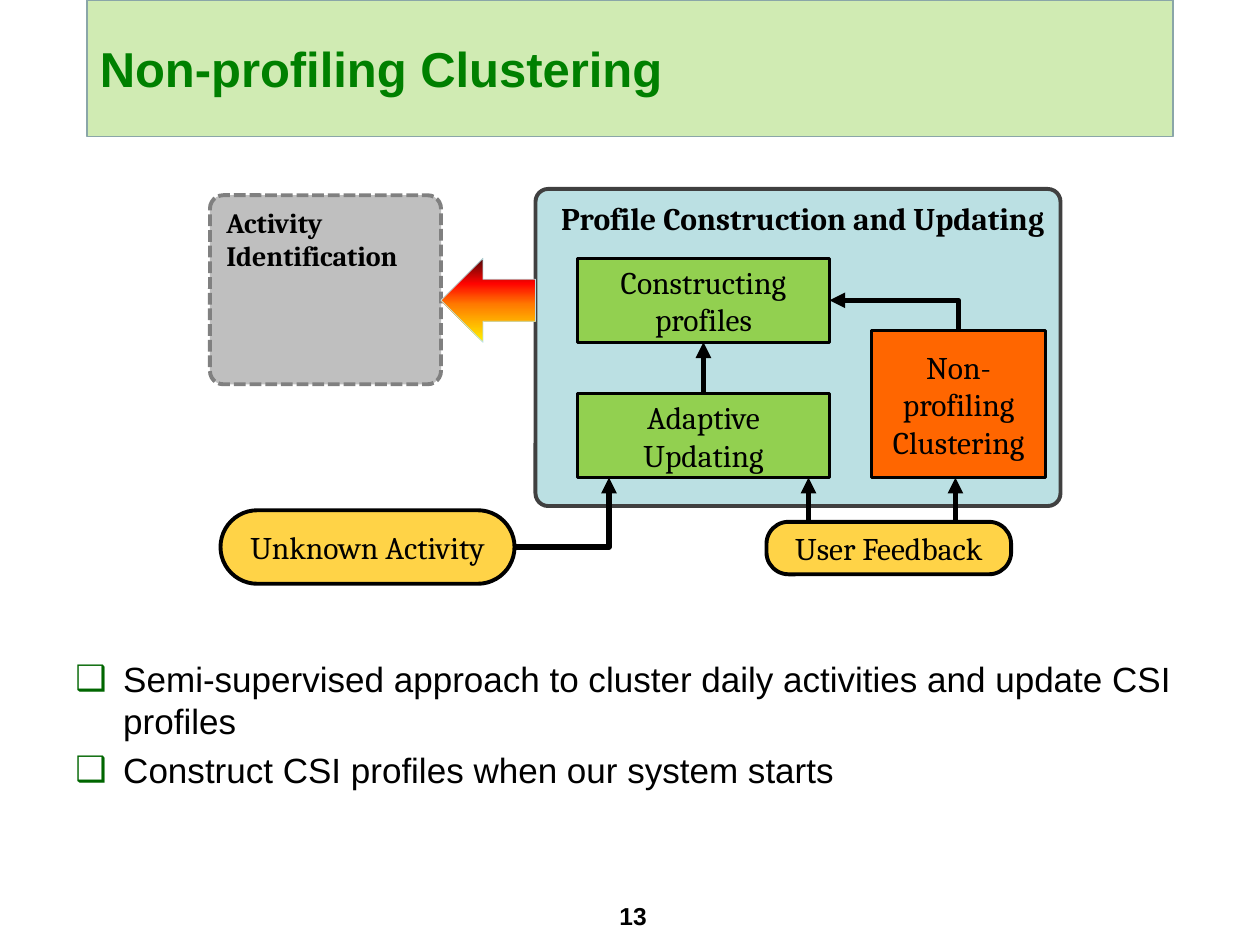
from lxml import etree
from pptx import Presentation
from pptx.dml.color import RGBColor
from pptx.enum.dml import MSO_LINE
from pptx.enum.shapes import MSO_CONNECTOR, MSO_SHAPE
from pptx.enum.text import MSO_ANCHOR, PP_ALIGN
from pptx.oxml.ns import qn
from pptx.util import Inches, Pt

LEFT, CENTER, RIGHT = PP_ALIGN.LEFT, PP_ALIGN.CENTER, PP_ALIGN.RIGHT
TOP, MIDDLE = MSO_ANCHOR.TOP, MSO_ANCHOR.MIDDLE
RECT, ROUNDED, ARROW = MSO_SHAPE.RECTANGLE, MSO_SHAPE.ROUNDED_RECTANGLE, MSO_SHAPE.LEFT_ARROW
STRAIGHT, ELBOW = MSO_CONNECTOR.STRAIGHT, MSO_CONNECTOR.ELBOW
DASHED = MSO_LINE.SQUARE_DOT
TITLE_ONLY = 5
COLUMNS, ROWS = 120, 90

BLACK, GREEN, ORANGE, YELLOW = "000000", "92D050", "FF6600", "FFD347"
FLAME = [(0, "FFF200"), (45, "FF7A00"), (70, "FF0300"), (100, "4D0808")]


def color(code):
    return RGBColor.from_string(code)


def add_node(parent, tag, **attributes):
    return etree.SubElement(parent, qn(tag), attributes)


class SlideBuilder:
    sans, serif = "Arial", "Cambria"

    def __init__(self, deck):
        self.width, self.height = deck.slide_width, deck.slide_height
        self.page = deck.slides.add_slide(deck.slide_layouts[TITLE_ONLY])

    def place(self, column, row):
        return round(self.width * column / COLUMNS), round(self.height * row / ROWS)

    def area(self, column, row, columns, rows):
        return *self.place(column, row), *self.place(columns, rows)

    def style_font(self, para, name, size, ink=BLACK, bold=False):
        font = para.font
        font.name, font.size, font.bold = name, Pt(size), bold
        font.color.rgb = color(ink)

    def paint(self, shape, fill, line, weight):
        shape.fill.solid()
        shape.fill.fore_color.rgb = color(fill)
        shape.line.color.rgb = color(line)
        shape.line.width = Pt(weight)

    def title(self, text, *cells):
        title = self.page.shapes.title
        title.left, title.top, title.width, title.height = self.area(*cells)
        self.paint(title, "D0EBB3", "8AA6A8", 1)
        title.text_frame.text = text
        title.text_frame.vertical_anchor = MIDDLE
        para = title.text_frame.paragraphs[0]
        para.alignment = LEFT
        self.style_font(para, self.sans, 28, "008000", True)

    def box(self, text, cells, fill, kind=RECT, radius=None, line=BLACK, weight=1.5,
            size=18, bold=False, align=CENTER, anchor=MIDDLE):
        box = self.page.shapes.add_shape(kind, *self.area(*cells))
        box.shadow.inherit = False
        if radius is not None:
            box.adjustments[0] = radius
        self.paint(box, fill, line, weight)
        frame = box.text_frame
        frame.word_wrap, frame.vertical_anchor = True, anchor
        frame.text = text
        frame.paragraphs[0].alignment = align
        self.style_font(frame.paragraphs[0], self.serif, size, bold=bold)
        return box

    def gradient_arrow(self, cells, stops, line):
        arrow = self.page.shapes.add_shape(ARROW, *self.area(*cells))
        arrow.shadow.inherit = False
        arrow.line.color.rgb = color(line)
        arrow.line.width = Pt(0.5)
        arrow.fill.gradient()
        arrow.fill.gradient_angle = 90
        stop_list = next(arrow._element.iter(qn("a:gsLst")))
        for stop in list(stop_list):
            stop_list.remove(stop)
        for percent, code in stops:
            stop = add_node(stop_list, "a:gs", pos=str(percent * 1000))
            add_node(stop, "a:srgbClr", val=code)

    def connector(self, start, end, kind=STRAIGHT, head_at="a:tailEnd"):
        link = self.page.shapes.add_connector(kind, *self.place(*start), *self.place(*end))
        link.line.color.rgb = color(BLACK)
        link.line.width = Pt(3)
        add_node(link.line._get_or_add_ln(), head_at, type="triangle")
        properties = link._element.spPr
        add_node(properties, "a:effectLst")
        if kind == ELBOW:
            properties.find(qn("a:prstGeom")).set("prst", "bentConnector2")

    def text_box(self, cells):
        frame = self.page.shapes.add_textbox(*self.area(*cells)).text_frame
        frame.word_wrap = True
        return frame

    def bullets(self, items, cells):
        frame = self.text_box(cells)
        for index, item in enumerate(items):
            para = frame.add_paragraph() if index else frame.paragraphs[0]
            para.text = item
            if index:
                para.space_before = Pt(4)
            properties = para._p.get_or_add_pPr()
            properties.set("marL", str(Inches(0.38)))
            properties.set("indent", str(-Inches(0.38)))
            add_node(add_node(properties, "a:buClr"), "a:srgbClr", val="006600")
            add_node(properties, "a:buFont", typeface=self.sans)
            add_node(properties, "a:buChar", char="❑")
            self.style_font(para, self.sans, 20)

    def page_number(self, number, cells):
        para = self.text_box(cells).paragraphs[0]
        para.text = number
        para.alignment = CENTER
        self.style_font(para, self.sans, 14, bold=True)


def main():
    deck = Presentation()
    deck.slide_width, deck.slide_height = Inches(10), Inches(7.5)
    slide = SlideBuilder(deck)
    slide.title("Non-profiling Clustering", 8.3, 0, 103.4, 13)

    activity = slide.box("Activity Identification", (20, 18.6, 22, 18), "BFBFBF", ROUNDED, 0.07,
                         "808080", 2.25, 16, True, LEFT, TOP)
    activity.line.dash_style = DASHED
    slide.box("Profile Construction and Updating", (51, 18, 50, 30.2), "BBE0E3", ROUNDED, 0.04,
              "404040", 2.25, 18, True, RIGHT, TOP)
    slide.gradient_arrow((42, 24.6, 9, 8), FLAME, "BBE0E3")

    base = 45.5
    slide.box("Constructing profiles", (55, 24.6, 24, 8), GREEN)
    slide.box("Adaptive Updating", (55, base - 8, 24, 8), GREEN)
    slide.box("Non-profiling Clustering", (83, base - 14, 16.6, 14), ORANGE)
    slide.box("Unknown Activity", (21, 48.6, 28, 7), YELLOW, ROUNDED, 0.5, weight=2.25)
    slide.box("User Feedback", (73, 49.7, 23.3, 5), YELLOW, ROUNDED, 0.42, weight=2.25)

    slide.connector((67, base - 8), (67, 32.6))
    slide.connector((79, 28.6), (91.3, base - 14), ELBOW, "a:headEnd")
    slide.connector((49, 52.1), (58, base), ELBOW)
    for column in (77, 91):
        slide.connector((column, 49.7), (column, base))

    slide.bullets(["Semi-supervised approach to cluster daily activities and update CSI profiles",
                   "Construct CSI profiles when our system starts"], (6, 62, 108, 22.4))
    slide.page_number("13", (46.3, 85.2, 28, 4.4))
    deck.save("out.pptx")


if __name__ == "__main__":
    main()
